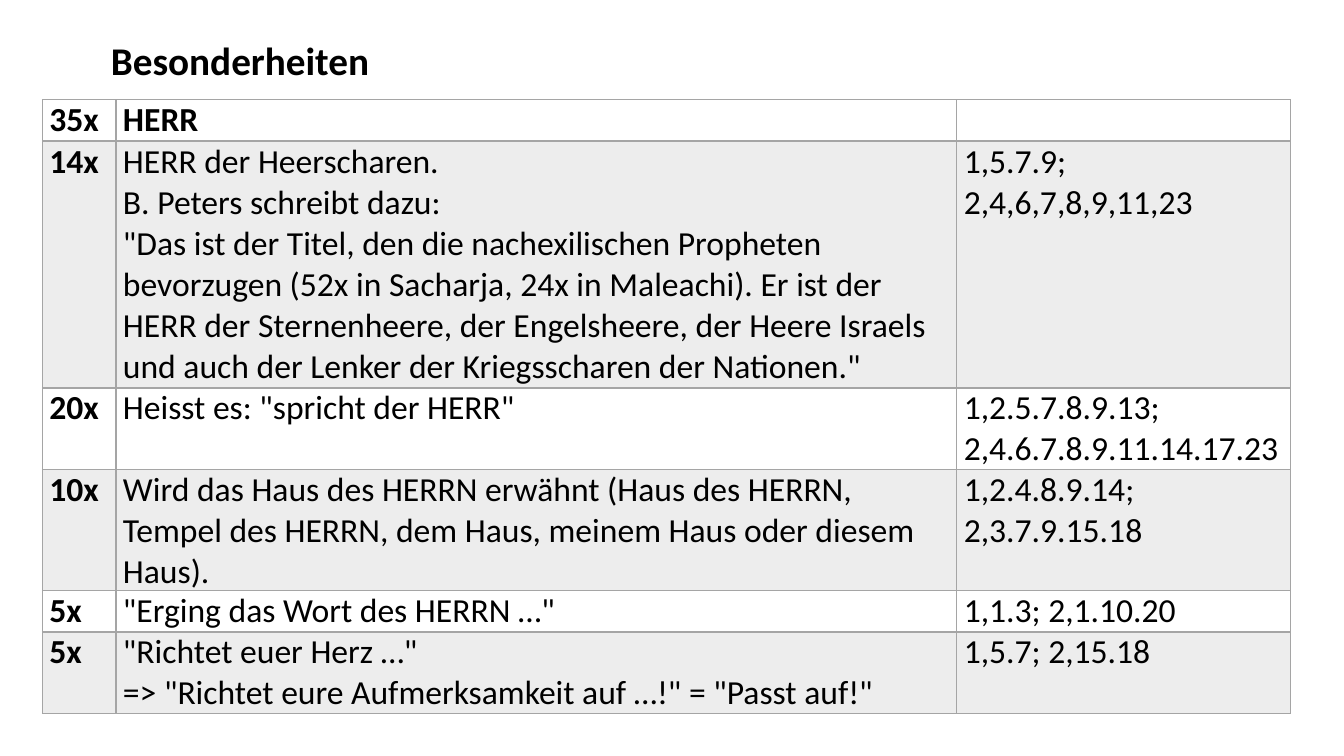
from lxml import etree
from pptx import Presentation
from pptx.dml.color import RGBColor
from pptx.enum.text import MSO_ANCHOR, MSO_AUTO_SIZE, PP_ALIGN
from pptx.oxml.ns import qn
from pptx.util import Inches, Pt

TOP = MSO_ANCHOR.TOP
GROW = MSO_AUTO_SIZE.SHAPE_TO_FIT_TEXT
LEFT = PP_ALIGN.LEFT
BLACK = RGBColor(0x00, 0x00, 0x00)
GREY = RGBColor(0xA5, 0xA5, 0xA5)
FONT = "Calibri"
COLS = [0.73, 8.34, 3.31]
HEIGHTS = [0.41, 2.45, 0.81, 0.81, 0.41, 0.81]
ROWS = [
    ("35x", "HERR", ""),
    ("14x", "HERR der Heerscharen.\nB. Peters schreibt dazu:\n"
     "\"Das ist der Titel, den die nachexilischen Propheten bevorzugen "
     "(52x in Sacharja, 24x in Maleachi). Er ist der HERR der Sternenheere, "
     "der Engelsheere, der Heere Israels und auch der Lenker der "
     "Kriegsscharen der Nationen.\"", "1,5.7.9; 2,4,6,7,8,9,11,23"),
    ("20x", "Heisst es: \"spricht der HERR\"",
     "1,2.5.7.8.9.13; 2,4.6.7.8.9.11.14.17.23"),
    ("10x", "Wird das Haus des HERRN erwähnt (Haus des HERRN, Tempel des "
     "HERRN, dem Haus, meinem Haus oder diesem Haus).",
     "1,2.4.8.9.14; 2,3.7.9.15.18"),
    ("5x", "\"Erging das Wort des HERRN …\"", "1,1.3; 2,1.10.20"),
    ("5x", "\"Richtet euer Herz …\"\n"
     "=> \"Richtet eure Aufmerksamkeit auf …!\" = \"Passt auf!\"",
     "1,5.7; 2,15.18"),
]


def write(frame, text, size=24, bold=False, before=0, lines=1.0):
    frame.text = text
    for para in frame.paragraphs:
        para.alignment = LEFT
        para.space_before = Pt(before)
        para.line_spacing = lines
        para.font.size = Pt(size)
        for run in para.runs:
            font = run.font
            font.name, font.size, font.bold = FONT, Pt(size), bold
            font.color.rgb = BLACK


class Page:
    """Holds the style and the slide and adds elements to it."""

    def __init__(self, deck):
        self.slide = deck.slides.add_slide(deck.slide_layouts[5])
        self.line = GREY
        self.band = GREY

    def title(self, text, left, top, width, height):
        shape = self.slide.shapes.title
        shape.left, shape.top = Inches(left), Inches(top)
        shape.width, shape.height = Inches(width), Inches(height)
        frame = shape.text_frame
        frame.word_wrap = False
        frame.auto_size = GROW
        frame.vertical_anchor = TOP
        write(frame, text, size=28, bold=True, before=12, lines=1.07)

    def border(self, cell, below):
        props = cell._tc.get_or_add_tcPr()
        for spot, side in enumerate("LRTB"):
            width = below if side == "B" else 1
            edge = etree.Element(qn(f"a:ln{side}"), w=str(Pt(width)))
            fill = etree.SubElement(edge, qn("a:solidFill"))
            etree.SubElement(fill, qn("a:srgbClr"), val=str(self.line))
            props.insert(spot, edge)

    def shade(self, cell, banded):
        if not banded:
            cell.fill.background()
            return
        cell.fill.solid()
        cell.fill.fore_color.rgb = self.band
        color = cell._tc.tcPr.find(".//" + qn("a:srgbClr"))
        etree.SubElement(color, qn("a:alpha"), val="20000")

    def table(self, rows, left, top, cols, heights):
        grid = self.slide.shapes.add_table(
            len(rows), len(cols), Inches(left), Inches(top),
            Inches(sum(cols)), Inches(sum(heights))).table
        grid.first_row = grid.horz_banding = False
        for col, width in zip(grid.columns, cols):
            col.width = Inches(width)
        for r, (row, height) in enumerate(zip(rows, heights)):
            grid.rows[r].height = Inches(height)
            for c, text in enumerate(row):
                cell = grid.cell(r, c)
                cell.margin_left = cell.margin_right = Inches(0.07)
                cell.margin_top = cell.margin_bottom = 0
                write(cell.text_frame, text, bold=r == 0 or c == 0)
                self.shade(cell, r % 2 == 1)
                self.border(cell, 2 if r == 0 else 1)


def main():
    deck = Presentation()
    deck.slide_width, deck.slide_height = Inches(13.33), Inches(7.5)
    page = Page(deck)
    page.title("Besonderheiten", 1, 0.28, 2.8, 0.58)
    page.table(ROWS, 0.42, 0.99, COLS, HEIGHTS)
    deck.save("out.pptx")


if __name__ == "__main__":
    main()
